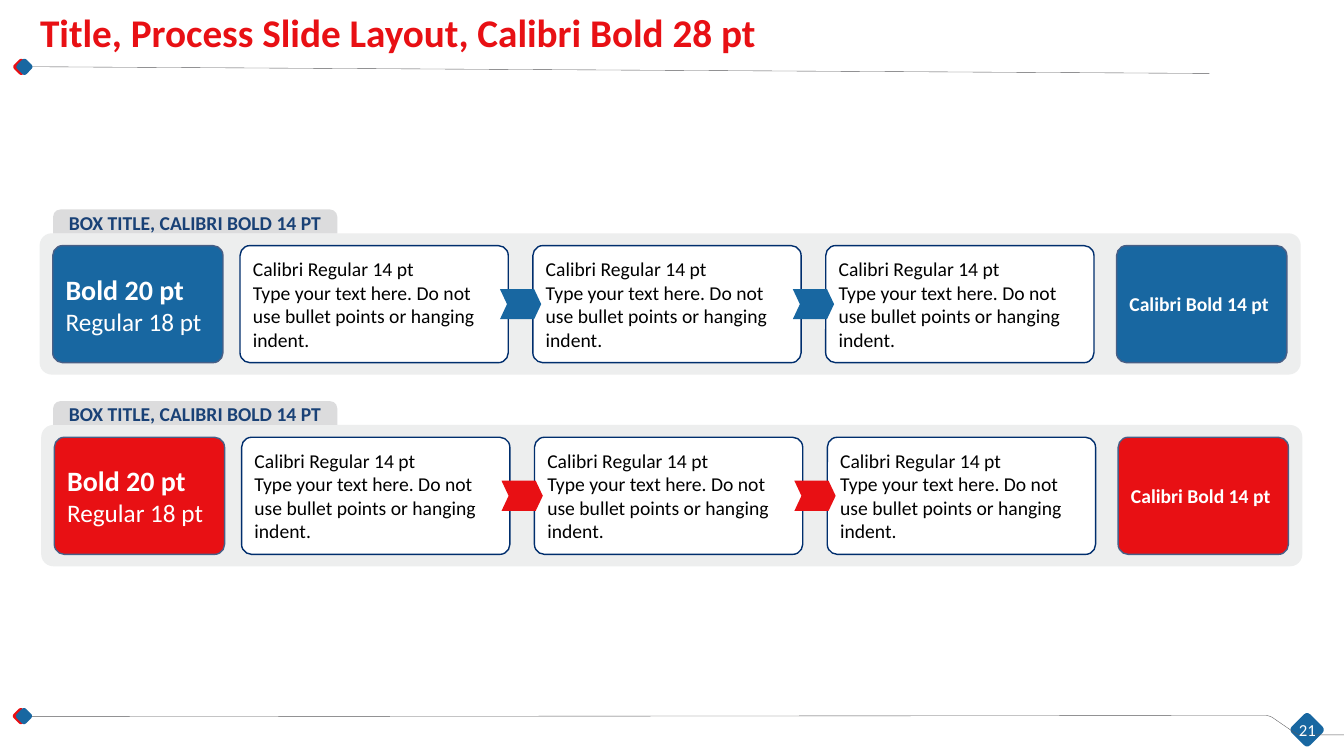
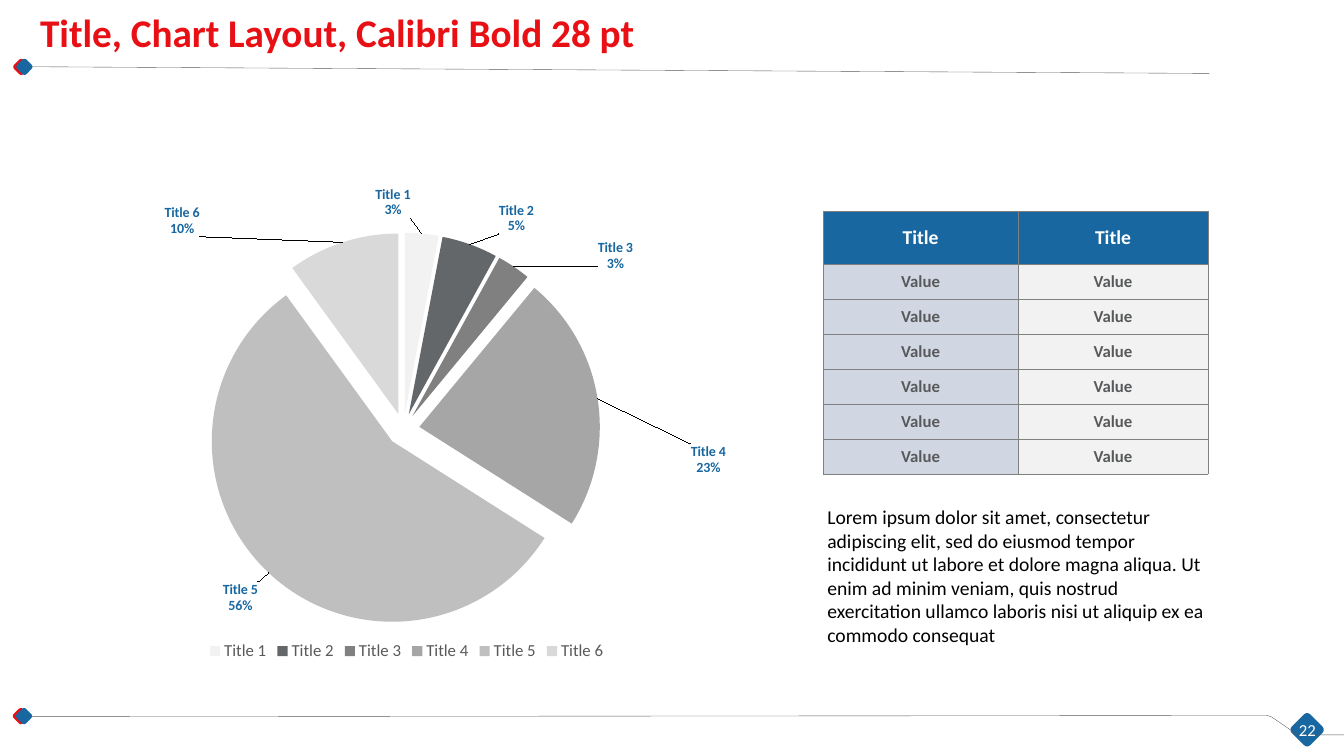
from lxml import etree
from pptx import Presentation
from pptx import util as u
from pptx.chart import data as chart_data
from pptx.dml import color
from pptx.enum import chart as charts, shapes, text
from pptx.oxml import ns

COLORS = {
    "red": "E81014", "blue": "1867A1", "navy": "002E6D", "tab text": "194176",
    "edge": "485F86", "panel": "EDEEEE", "tab": "DCDCDD", "gray": "58595B",
    "grid": "808080", "value left": "D1D7E2", "value right": "F2F2F2",
    "legend": "595959", "white": "FFFFFF", "black": "000000",
}
FONT = "Calibri"
CENTER, LEFT = text.PP_ALIGN.CENTER, text.PP_ALIGN.LEFT
MIDDLE, TOP, BOTTOM = text.MSO_ANCHOR.MIDDLE, text.MSO_ANCHOR.TOP, text.MSO_ANCHOR.BOTTOM
ROUND = shapes.MSO_SHAPE.ROUNDED_RECTANGLE

# All positions and sizes are in centimetres; text lines are (text, size, bold).
PROCESS_TITLE = "Title, Process Slide Layout, Calibri Bold 28 pt"
CHART_TITLE = "Title, Chart Layout, Calibri Bold 28 pt"
PROCESS_ROWS = [  # accent, panel left, panel top
    ("blue", 1.0, 5.88),
    ("red", 1.04, 10.71),
]
TAB_LINES = [("BOX TITLE, CALIBRI BOLD 14 PT", 14, True)]
START_LINES = [("Bold 20 pt", 20, True), ("Regular 18 pt", 18, False)]
STEP_LINES = [
    ("Calibri Regular 14 pt", 14, False),
    ("Type your text here. Do not use bullet points or hanging indent.", 14, False),
]
END_LINES = [("Calibri Bold 14 pt", 14, True)]
STEP_COUNT = 3

SLICES = [  # category, value, fill, label shift as a share of the chart
    ("Title 1", 3, "F2F2F2", (-0.07, -0.02)),
    ("Title 2", 5, "646769", (0.04, -0.01)),
    ("Title 3", 3, "808080", (0.12, 0.02)),
    ("Title 4", 23, "A6A6A6", (0.13, 0.16)),
    ("Title 5", 56, "BFBFBF", (-0.01, 0.01)),
    ("Title 6", 10, "D9D9D9", (-0.21, 0)),
]
PLOT_AREA = {"x": 0.2, "y": 0.11, "w": 0.59, "h": 0.81}
TABLE_ROWS = [("Title", "Title")] + [("Value", "Value")] * 6
BODY = ("Lorem ipsum dolor sit amet, consectetur adipiscing elit, sed do eiusmod "
        "tempor incididunt ut labore et dolore magna aliqua. Ut enim ad minim veniam, "
        "quis nostrud exercitation ullamco laboris nisi ut aliquip ex ea commodo consequat")


def rgb(name):
    return color.RGBColor.from_string(COLORS.get(name, name))


def lengths(*values):
    return [u.Cm(value) for value in values]


def set_font(font, size, ink, bold=False):
    for name, value in {"name": FONT, "size": u.Pt(size), "bold": bold}.items():
        setattr(font, name, value)
    font.color.rgb = rgb(ink)


def write(frame, lines, ink, align=LEFT, anchor=MIDDLE, spacing=None):
    frame.word_wrap = True
    frame.vertical_anchor = anchor
    for index, (words, size, bold) in enumerate(lines):
        paragraph = frame.add_paragraph() if index else frame.paragraphs[0]
        paragraph.alignment = align
        paragraph.line_spacing = spacing
        run = paragraph.add_run()
        run.text = words
        set_font(run.font, size, ink, bold)


def add_box(slide, kind, box, fill, edge=None, adjust=(), rotation=0):
    shape = slide.shapes.add_shape(kind, *lengths(*box))
    shape.shadow.inherit = False
    shape.rotation = rotation
    shape.fill.solid()
    shape.fill.fore_color.rgb = rgb(fill)
    if edge:
        shape.line.color.rgb = rgb(edge)
        shape.line.width = u.Pt(1)
    else:
        shape.line.fill.background()
    for index, value in enumerate(adjust):
        shape.adjustments[index] = value
    return shape


def add_text(slide, box, lines, ink, **style):
    write(slide.shapes.add_textbox(*lengths(*box)).text_frame, lines, ink, **style)


def style_rule(shape):
    shape.line.color.rgb = rgb("gray")
    shape.line.width = u.Pt(0.25)


def bezier(start, first, second, end, steps=8):
    """Points along a cubic curve, without its start."""
    points = []
    for step in range(1, steps + 1):
        t = step / steps
        weights = ((1 - t) ** 3, 3 * t * (1 - t) ** 2, 3 * t * t * (1 - t), t ** 3)
        points.append(tuple(sum(w * p[axis] for w, p in zip(weights, (start, first, second, end)))
                            for axis in (0, 1)))
    return points


def add_diamonds(slide, left, top):
    for accent, shift in (("red", 0), ("blue", 0.08)):
        add_box(slide, ROUND, (left + shift, top, 0.33, 0.33), accent,
                adjust=[0.22], rotation=45)


def add_footer_rule(slide):
    outline = [(33.87, 18.52), (32.82, 18.52)]
    outline += bezier((32.82, 18.52), (32.74, 18.52), (32.66, 18.49), (32.59, 18.44))
    outline += [(32.11, 18.11)]
    outline += bezier((32.11, 18.11), (32.05, 18.06), (31.97, 18.03), (31.88, 18.03))
    outline += [(0.61, 18.06)]
    points = [tuple(lengths(*point)) for point in outline]
    builder = slide.shapes.build_freeform(*points[0])
    builder.add_line_segments(points[1:], close=False)
    rule = builder.convert_to_shape()
    rule.shadow.inherit = False
    rule.fill.background()
    style_rule(rule)


def add_frame(presentation, title, number):
    """New slide with the shared title, rules, diamonds and page number."""
    slide = presentation.slides.add_slide(presentation.slide_layouts[6])
    add_box(slide, ROUND, (32.61, 18.06, 0.66, 0.66), "blue", rotation=45)
    rule = slide.shapes.add_connector(shapes.MSO_CONNECTOR.STRAIGHT,
                                      *lengths(0.58, 1.68, 30.48, 1.85))
    etree.SubElement(rule._element.spPr, ns.qn("a:effectLst"))
    style_rule(rule)
    add_footer_rule(slide)
    add_diamonds(slide, 0.37, 1.52)
    add_diamonds(slide, 0.36, 17.88)
    add_text(slide, (0.76, 0.09, 30.78, 1.45), [(title, 28, True)], "red",
             anchor=BOTTOM, spacing=0.9)
    add_text(slide, (32.36, 18.14, 1.17, 0.48), [(str(number), 12, False)], "white",
             align=CENTER)
    return slide


def add_process(slide, accent, left, top):
    pad, card_height, step_width, pitch = 0.31, 2.95, 6.76, 7.38
    first_step, arrow_width, arrow_height = left + 5.05, 1.04, 0.76
    card_top = top + pad
    add_box(slide, ROUND, (left, top, 31.78, 3.56), "panel", adjust=[0.085])
    tab = add_box(slide, shapes.MSO_SHAPE.ROUND_2_SAME_RECTANGLE,
                  (1.34, top - 0.6, 7.16, 0.6), "tab", adjust=[0.3, 0])
    write(tab.text_frame, TAB_LINES, "tab text", align=CENTER)

    cards = [(left + 0.33, 4.29, accent, "edge", START_LINES, "white")]
    cards += [(first_step + index * pitch, step_width, "white", "navy", STEP_LINES, "black")
              for index in range(STEP_COUNT)]
    cards += [(left + 27.14, 4.29, accent, "edge", END_LINES, "white")]
    for card_left, width, fill, edge, lines, ink in cards:
        card = add_box(slide, ROUND, (card_left, card_top, width, card_height),
                       fill, edge, [0.085])
        write(card.text_frame, lines, ink)

    arrow_top = card_top + (card_height - arrow_height) / 2
    for index in range(STEP_COUNT - 1):
        gap_middle = first_step + index * pitch + (step_width + pitch) / 2
        add_box(slide, shapes.MSO_SHAPE.CHEVRON,
                (gap_middle - arrow_width / 2, arrow_top, arrow_width, arrow_height),
                accent, adjust=[0.235])


def manual_layout(values, inner=False):
    layout = etree.Element(ns.qn("c:layout"))
    manual = etree.SubElement(layout, ns.qn("c:manualLayout"))
    settings = {"layoutTarget": "inner", "xMode": "edge", "yMode": "edge"} if inner else {}
    for name, value in {**settings, **values}.items():
        etree.SubElement(manual, ns.qn("c:" + name)).set("val", str(value))
    return layout


def separator():
    element = etree.Element(ns.qn("c:separator"))
    element.text = "\n"
    return element


def add_pie(slide):
    data = chart_data.CategoryChartData()
    data.categories = [entry[0] for entry in SLICES]
    data.add_series("Series 1", [entry[1] for entry in SLICES])
    chart = slide.shapes.add_chart(charts.XL_CHART_TYPE.PIE,
                                   *lengths(1.78, 4.52, 16.94, 12.24), data).chart
    set_font(chart.font, 10, "black")
    chart.has_title = False
    chart.has_legend = True
    chart.legend.position = charts.XL_LEGEND_POSITION.BOTTOM
    chart.legend.include_in_layout = False
    set_font(chart.legend.font, 12, "legend")
    plot = chart.plots[0]
    plot.vary_by_categories = True
    series = plot.series[0]

    labels = series.data_labels
    for name in ("show_percentage", "show_category_name"):
        setattr(labels, name, True)
    labels.show_value = False
    labels.position = charts.XL_LABEL_POSITION.OUTSIDE_END
    set_font(labels.font, 10, "blue", True)
    for index, (_, _, fill, _) in enumerate(SLICES):
        point = series.points[index]
        point.format.fill.solid()
        point.format.fill.fore_color.rgb = rgb(fill)
        set_font(point.data_label.font, 10, "blue", True)
        point.data_label.position = charts.XL_LABEL_POSITION.OUTSIDE_END

    root = chart.element
    for label, (_, _, _, (x, y)) in zip(root.iter(ns.qn("c:dLbl")), SLICES):
        label.find(ns.qn("c:idx")).addnext(manual_layout({"x": x, "y": y}))
        for name, value in (("showVal", "0"), ("showCatName", "1"), ("showPercent", "1")):
            label.find(ns.qn("c:" + name)).set("val", value)
        label.append(separator())
    group = next(root.iter(ns.qn("c:dLbls")))
    leader = group.find(ns.qn("c:showLeaderLines"))
    if leader is None:
        leader = etree.SubElement(group, ns.qn("c:showLeaderLines"))
    leader.set("val", "1")
    leader.addprevious(separator())

    explosion = etree.Element(ns.qn("c:explosion"))
    explosion.set("val", "9")
    next(root.iter(ns.qn("c:dPt"))).addprevious(explosion)
    plot_area = next(root.iter(ns.qn("c:plotArea")))
    for old in plot_area.findall(ns.qn("c:layout")):
        plot_area.remove(old)
    plot_area.insert(0, manual_layout(PLOT_AREA, inner=True))


def add_borders(cell):
    properties = cell._tc.get_or_add_tcPr()
    for index, side in enumerate(("lnL", "lnR", "lnT", "lnB")):
        line = etree.Element(ns.qn("a:" + side), w=str(u.Pt(0.25)))
        fill = etree.SubElement(line, ns.qn("a:solidFill"))
        etree.SubElement(fill, ns.qn("a:srgbClr"), val=COLORS["grid"])
        properties.insert(index, line)


def add_value_table(slide):
    table = slide.shapes.add_table(len(TABLE_ROWS), 2, *lengths(20.75, 5.31, 9.7, 6.63)).table
    table.first_row = table.horz_banding = False
    for column, width in zip(table.columns, (4.9, 4.8)):
        column.width = u.Cm(width)
    for row_index, values in enumerate(TABLE_ROWS):
        header = row_index == 0
        table.rows[row_index].height = u.Cm(1.35 if header else 0.88)
        for column_index, value in enumerate(values):
            cell = table.cell(row_index, column_index)
            for side in ("left", "right", "top", "bottom"):
                setattr(cell, "margin_" + side, u.Cm(0.02))
            cell.fill.solid()
            body_fill = ("value left", "value right")[column_index]
            cell.fill.fore_color.rgb = rgb("blue" if header else body_fill)
            write(cell.text_frame, [(value, 14 if header else 12, True)],
                  "white" if header else "gray", align=CENTER)
            cell.vertical_anchor = MIDDLE
            add_borders(cell)


def main():
    presentation = Presentation()
    presentation.slide_width, presentation.slide_height = lengths(33.87, 19.05)
    process = add_frame(presentation, PROCESS_TITLE, 21)
    for row in PROCESS_ROWS:
        add_process(process, *row)
    chart_slide = add_frame(presentation, CHART_TITLE, 22)
    add_pie(chart_slide)
    add_text(chart_slide, (20.6, 12.6, 10.16, 3.84), [(BODY, 14, False)], "black", anchor=TOP)
    add_value_table(chart_slide)
    presentation.save("out.pptx")


if __name__ == "__main__":
    main()
